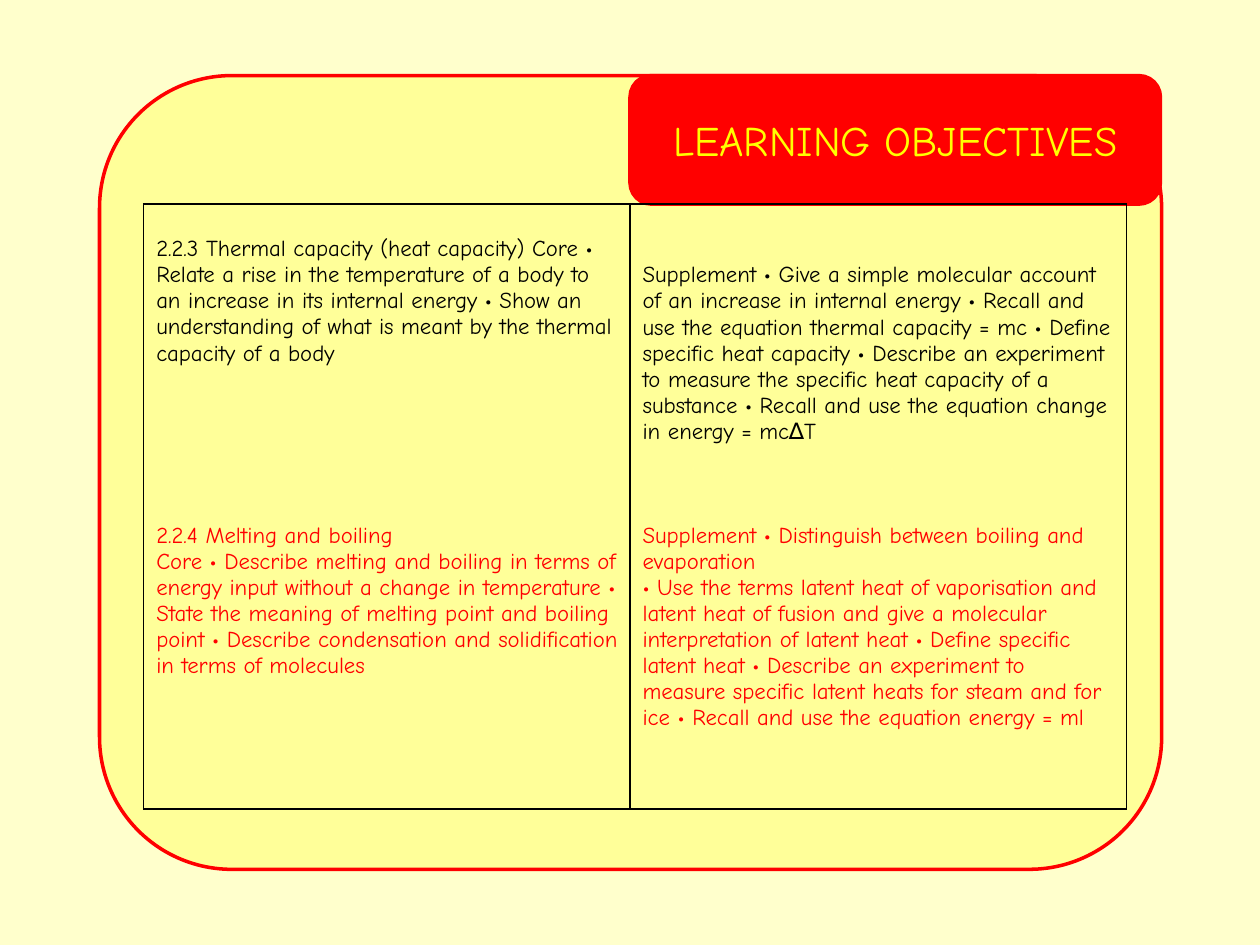
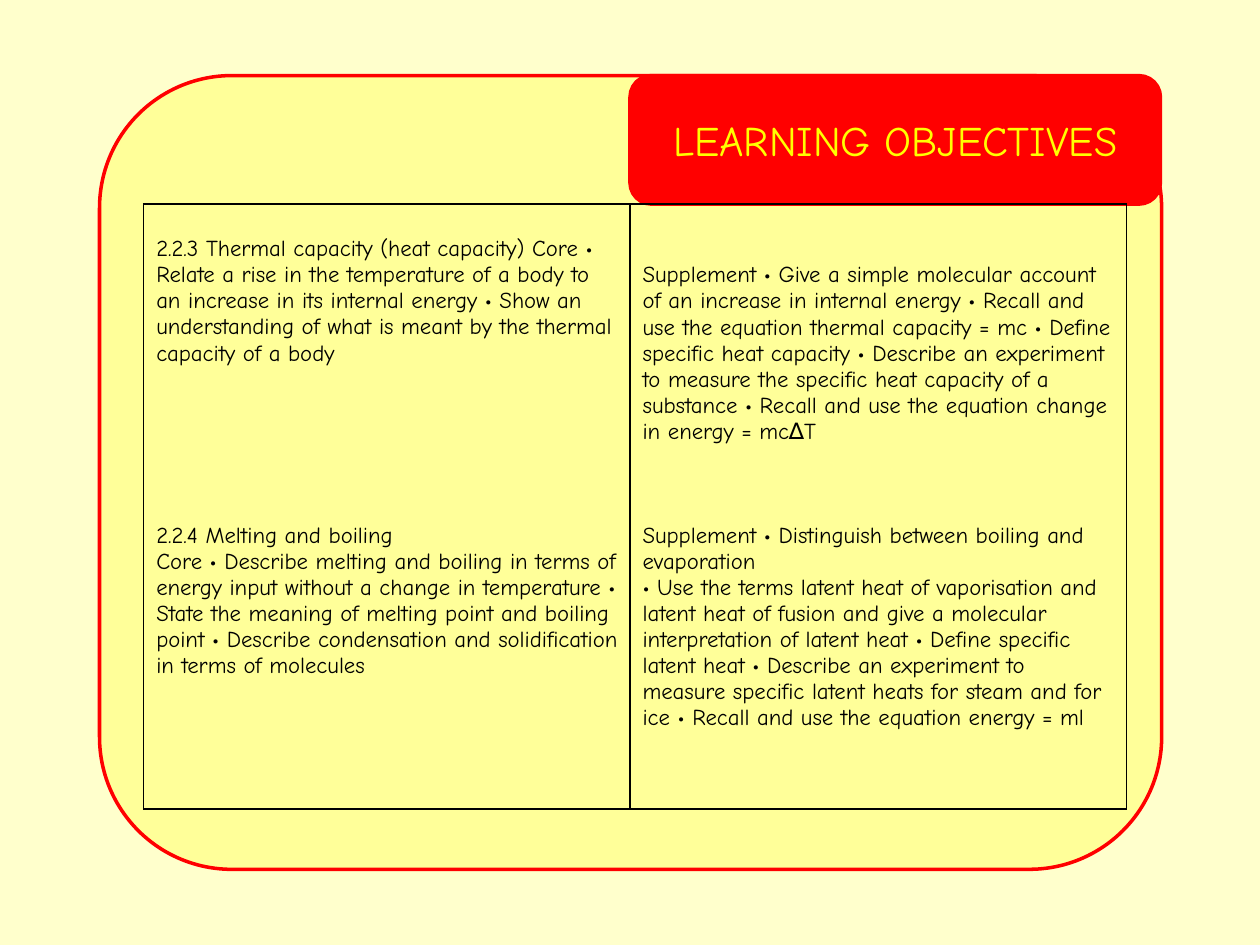
from lxml import etree
from pptx import Presentation
from pptx.dml.color import RGBColor
from pptx.enum.shapes import MSO_SHAPE
from pptx.enum.text import MSO_ANCHOR, PP_ALIGN
from pptx.oxml.ns import qn
from pptx.util import Inches, Pt

RECTANGLE, ROUNDED = MSO_SHAPE.RECTANGLE, MSO_SHAPE.ROUNDED_RECTANGLE
MIDDLE, CENTER = MSO_ANCHOR.MIDDLE, PP_ALIGN.CENTER

HEADING = "LEARNING OBJECTIVES"

# Each column: empty lines above, thermal capacity text,
# empty lines between the topics, melting and boiling paragraphs.
OBJECTIVES = [
    {
        "lines_above": 1,
        "thermal": "2.2.3 Thermal capacity (heat capacity) Core • Relate a rise in the "
                   "temperature of a body to an increase in its internal energy • Show an "
                   "understanding of what is meant by the thermal capacity of a body",
        "lines_between": 6,
        "melting": [
            "2.2.4 Melting and boiling",
            "Core • Describe melting and boiling in terms of energy input without a change "
            "in temperature • State the meaning of melting point and boiling point • "
            "Describe condensation and solidification in terms of molecules",
        ],
    },
    {
        "lines_above": 2,
        "thermal": "Supplement • Give a simple molecular account of an increase in internal "
                   "energy • Recall and use the equation thermal capacity = mc • Define "
                   "specific heat capacity • Describe an experiment to measure the specific "
                   "heat capacity of a substance • Recall and use the equation change in "
                   "energy = mc∆T",
        "lines_between": 3,
        "melting": [
            "Supplement • Distinguish between boiling and evaporation",
            "• Use the terms latent heat of vaporisation and latent heat of fusion and give "
            "a molecular interpretation of latent heat • Define specific latent heat • "
            "Describe an experiment to measure specific latent heats for steam and for ice "
            "• Recall and use the equation energy = ml",
        ],
    },
]
MELTING_COLORS = ["red", "black"]  # one slide each

COLORS = {
    "page": "FFFFCC",
    "panel": "FFFF99",
    "red": "FF0000",
    "yellow": "FFFF00",
    "black": "000000",
}
FONT = "Comic Neue"
PAGE = (0, 0, 10, 7.5)
PANEL = (0.79, 0.6, 8.43, 6.3)
BANNER = (5, 0.6, 4.21, 1.02)
TABLE_LEFT, TABLE_TOP, TABLE_HEIGHT = 1.14, 1.62, 4.8
COLUMN_WIDTHS = [3.86, 3.94]
LINE_HEIGHT = Pt(14.9)


def rgb(color):
    return RGBColor.from_string(COLORS[color])


def style_text(paragraph, size, color):
    for run in paragraph.runs:
        run.font.name = FONT
        run.font.size = Pt(size)
        run.font.color.rgb = rgb(color)


def add_block(slide, geometry, box, fill, line=None):
    block = slide.shapes.add_shape(geometry, *map(Inches, box))
    block.shadow.inherit = False
    block.fill.solid()
    block.fill.fore_color.rgb = rgb(fill)
    if line:
        block.line.color.rgb = rgb(line)
        block.line.width = Pt(2)
    else:
        block.line.fill.background()
    return block


def add_frame(slide):
    add_block(slide, RECTANGLE, PAGE, "page")
    add_block(slide, ROUNDED, PANEL, "panel", "red")
    banner = add_block(slide, ROUNDED, BANNER, "red", "red")

    title = slide.shapes.title
    title.left, title.top, title.width, title.height = map(Inches, BANNER)
    title.text_frame.text = HEADING
    title.text_frame.vertical_anchor = MIDDLE
    heading = title.text_frame.paragraphs[0]
    heading.alignment = CENTER
    style_text(heading, 24, "yellow")
    banner.element.addnext(title.element)  # title in front of its banner


def set_borders(cell):
    properties = cell._tc.get_or_add_tcPr()
    for side in ("a:lnL", "a:lnR", "a:lnT", "a:lnB"):
        border = etree.SubElement(properties, qn(side), w=str(Pt(1)))
        fill = etree.SubElement(border, qn("a:solidFill"))
        etree.SubElement(fill, qn("a:srgbClr"), val=COLORS["black"])


def fill_cell(cell, column, melting_color):
    set_borders(cell)
    cell.fill.background()
    cell.margin_top = Inches(0.05) + column["lines_above"] * LINE_HEIGHT
    frame = cell.text_frame
    frame.text = "\n".join([column["thermal"], *column["melting"]])
    thermal, *melting = frame.paragraphs
    style_text(thermal, 13, "black")
    for paragraph in melting:
        style_text(paragraph, 13, melting_color)
    melting[0].space_before = column["lines_between"] * LINE_HEIGHT


def add_objectives(slide, melting_color):
    table = slide.shapes.add_table(
        1, len(OBJECTIVES), Inches(TABLE_LEFT), Inches(TABLE_TOP),
        Inches(sum(COLUMN_WIDTHS)), Inches(TABLE_HEIGHT)).table
    table.first_row = table.horz_banding = False
    for index, column in enumerate(OBJECTIVES):
        table.columns[index].width = Inches(COLUMN_WIDTHS[index])
        fill_cell(table.cell(0, index), column, melting_color)


def main():
    prs = Presentation()
    prs.slide_width, prs.slide_height = Inches(10), Inches(7.5)
    background = prs.slide_master.background.fill
    background.solid()
    background.fore_color.rgb = rgb("panel")
    title_only = prs.slide_layouts[5]
    for melting_color in MELTING_COLORS:
        slide = prs.slides.add_slide(title_only)
        add_frame(slide)
        add_objectives(slide, melting_color)
    prs.save("out.pptx")


if __name__ == "__main__":
    main()
